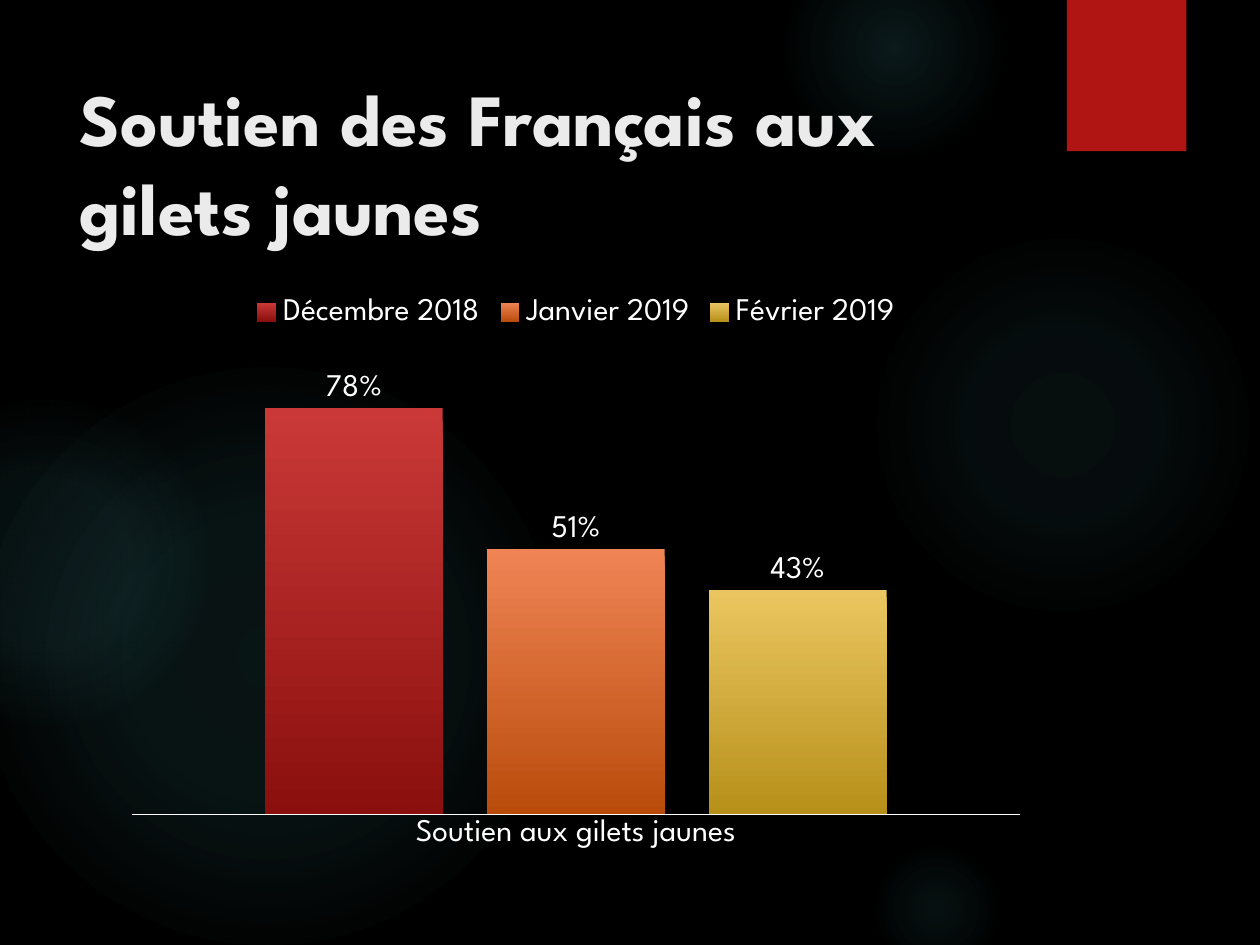
import lxml.etree
import pptx
import pptx.chart.data
import pptx.dml.color
import pptx.enum.chart
import pptx.enum.shapes
import pptx.enum.text
import pptx.oxml
import pptx.oxml.ns
import pptx.util

Cm = pptx.util.Cm
Pt = pptx.util.Pt
FONT = "League Spartan"
COLOURS = {
    "background": "000000",
    "glow": "50B9C1",
    "ribbon": "B01513",
    "title": "EBEBEB",
    "chart_text": "FFFFFF",
}
GLOWS = [
    ((17.5, 4.65, 7.82), ((0, 7), (36, 6), (69, 0))),
    ((15.8, -1.27, 4.45), ((0, 14), (36, 7), (73, 0))),
    ((17.5, 16.94, 2.74), ((0, 9), (36, 5), (66, 0))),
    ((-0.43, 7.42, 11.63), ((0, 11), (36, 10), (75, 0))),
    ((-2.34, 8.05, 6.55), ((0, 8), (36, 8), (72, 0))),
]
SUPPORT = [
    ("Décembre 2018", 0.78, ("CA3938", "8A0F0D")),
    ("Janvier 2019", 0.51, ("F08455", "B94C0B")),
    ("Février 2019", 0.43, ("EBC660", "B7901A")),
]


def rgb(name):
    return pptx.dml.color.RGBColor.from_string(COLOURS.get(name, name))


def style_font(font, size, colour, bold=False):
    font.name = FONT
    font.size = Pt(size)
    font.bold = bold
    font.color.rgb = rgb(colour)


def add_plain_shape(slide, kind, box):
    shape = slide.shapes.add_shape(kind, *map(Cm, box))
    shape.shadow.inherit = False
    shape.line.fill.background()
    return shape


def add_glow(slide, left, top, size, stops):
    glow = add_plain_shape(slide, pptx.enum.shapes.MSO_SHAPE.OVAL, (left, top, size, size))
    glow.fill.background()
    stop_xml = "".join(
        f'<a:gs pos="{position * 1000}"><a:srgbClr val="{COLOURS["glow"]}">'
        f'<a:alpha val="{opacity * 1000}"/></a:srgbClr></a:gs>'
        for position, opacity in stops
    )
    gradient = pptx.oxml.parse_xml(
        f'<a:gradFill {pptx.oxml.ns.nsdecls("a")} rotWithShape="1"><a:gsLst>{stop_xml}</a:gsLst>'
        '<a:path path="circle"><a:fillToRect l="50000" t="50000" r="50000" b="50000"/></a:path>'
        "</a:gradFill>"
    )
    properties = glow._element.spPr
    properties.replace(properties.find(pptx.oxml.ns.qn("a:noFill")), gradient)


def add_ribbon(slide, box):
    ribbon = add_plain_shape(slide, pptx.enum.shapes.MSO_SHAPE.RECTANGLE, box)
    ribbon.fill.solid()
    ribbon.fill.fore_color.rgb = rgb("ribbon")
    effects = ribbon._element.spPr.find(pptx.oxml.ns.qn("a:effectLst"))
    effects.append(pptx.oxml.parse_xml(
        f'<a:outerShdw {pptx.oxml.ns.nsdecls("a")} blurRad="{Pt(3)}" dist="{Pt(2)}" '
        'dir="5400000" rotWithShape="0"><a:srgbClr val="000000"><a:alpha val="45000"/>'
        "</a:srgbClr></a:outerShdw>"
    ))


def add_title(slide, box):
    frame = slide.shapes.add_textbox(*map(Cm, box)).text_frame
    frame.word_wrap = True
    frame.vertical_anchor = pptx.enum.text.MSO_ANCHOR.BOTTOM
    run = frame.paragraphs[0].add_run()
    run.text = "Soutien des Français aux gilets jaunes"
    style_font(run.font, 42, "title", bold=True)


def set_plot_layout(chart, **fractions):
    plot_area = chart._chartSpace.chart.plotArea
    for layout in plot_area.findall(pptx.oxml.ns.qn("c:layout")):
        plot_area.remove(layout)
    values = "".join(f'<c:{key} val="{value}"/>' for key, value in fractions.items())
    plot_area.insert(0, pptx.oxml.parse_xml(
        f'<c:layout {pptx.oxml.ns.nsdecls("c")}><c:manualLayout><c:layoutTarget val="inner"/>'
        f'<c:xMode val="edge"/><c:yMode val="edge"/>{values}</c:manualLayout></c:layout>'
    ))


def add_support_chart(slide, box):
    data = pptx.chart.data.CategoryChartData(number_format="0%")
    data.categories = ["Soutien aux gilets jaunes"]
    for month, share, _ in SUPPORT:
        data.add_series(month, [share])
    chart = slide.shapes.add_chart(
        pptx.enum.chart.XL_CHART_TYPE.COLUMN_CLUSTERED, *map(Cm, box), data
    ).chart
    style_font(chart.font, 18, "chart_text")
    chart.has_title = False
    chart.has_legend = True
    chart.legend.position = pptx.enum.chart.XL_LEGEND_POSITION.TOP
    chart.legend.include_in_layout = False
    set_plot_layout(chart, x=0.02, y=0.11, w=0.96, h=0.81)

    shares = chart.value_axis
    shares.visible = False
    shares.has_major_gridlines = False
    shares.minimum_scale = 0
    shares.maximum_scale = 0.9
    question = chart.category_axis
    question.major_tick_mark = pptx.enum.chart.XL_TICK_MARK.NONE
    question.format.line.color.rgb = rgb("chart_text")
    question.format.line.width = Pt(0.75)

    plot = chart.plots[0]
    plot.vary_by_categories = False
    plot.gap_width = 150
    plot.overlap = -25
    for series, (_, _, shades) in zip(plot.series, SUPPORT):
        fill = series.format.fill
        fill.gradient()
        fill.gradient_angle = 270
        for stop, shade in zip(fill.gradient_stops, shades):
            stop.color.rgb = rgb(shade)
        labels = series.data_labels
        labels.show_value = True
        labels.number_format = "0%"
        labels.number_format_is_linked = False
        labels.position = pptx.enum.chart.XL_LABEL_POSITION.OUTSIDE_END
        style_font(labels.font, 18, "chart_text")


def main():
    deck = pptx.Presentation()
    deck.slide_width, deck.slide_height = Cm(25.4), Cm(19.05)
    slide = deck.slides.add_slide(deck.slide_layouts[6])
    slide.background.fill.solid()
    slide.background.fill.fore_color.rgb = rgb("background")
    for place, stops in GLOWS:
        add_glow(slide, *place, stops)
    add_ribbon(slide, (21.51, 0, 2.41, 3.05))
    add_title(slide, (1.35, 1.27, 18.42, 3.89))
    add_support_chart(slide, (2.29, 5.69, 18.64, 11.66))
    deck.save("out.pptx")


if __name__ == "__main__":
    main()
